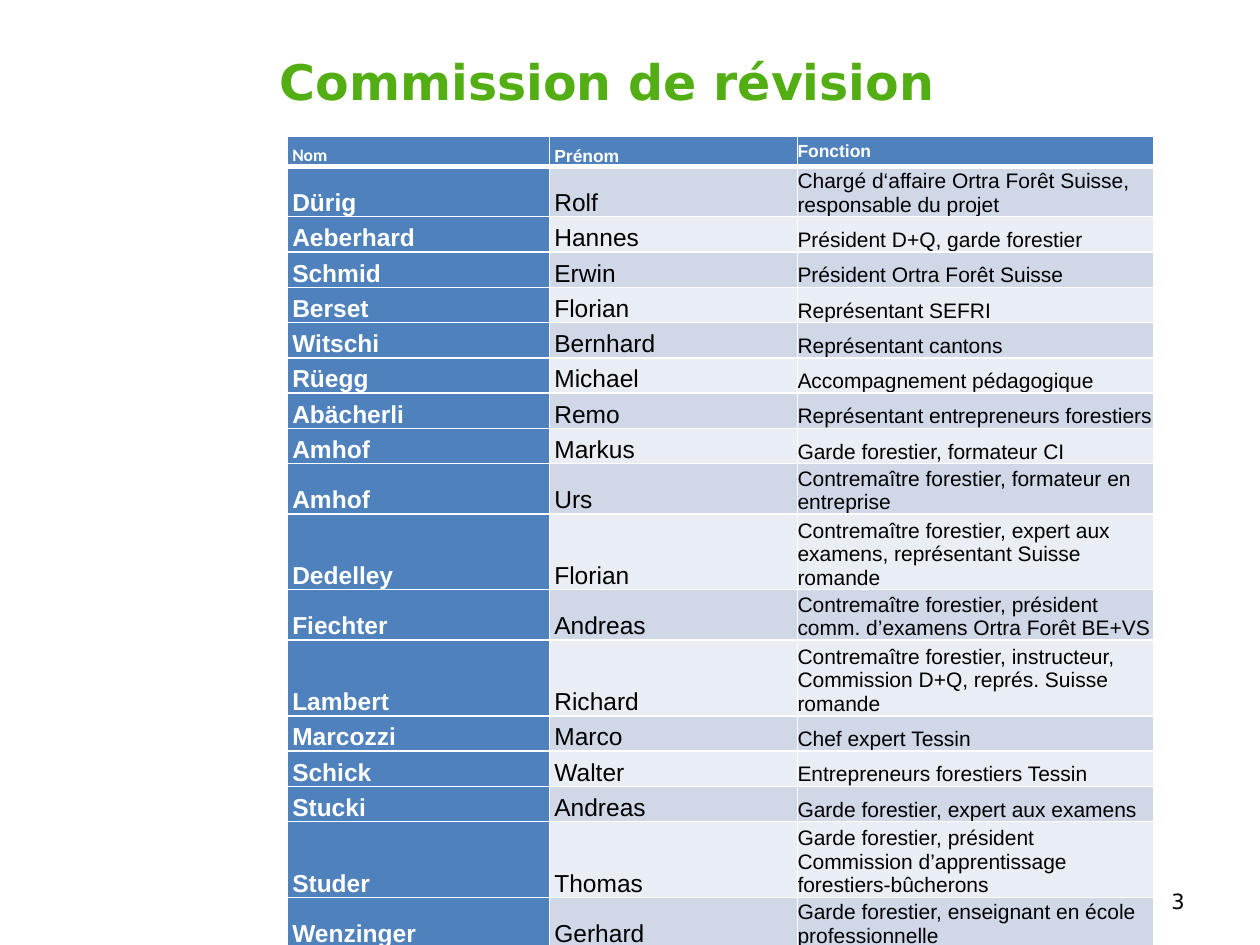
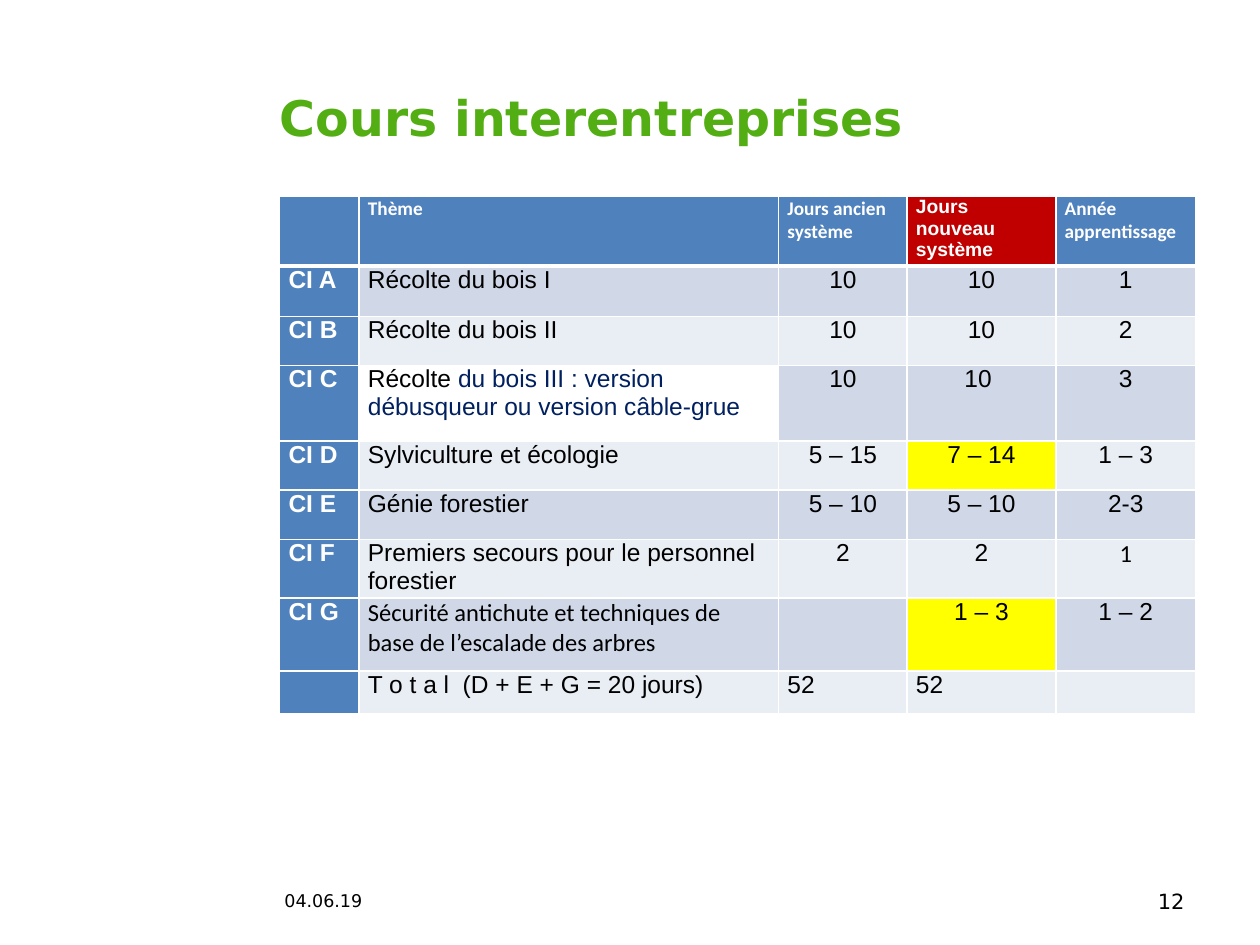
"""Builds two slides: the revision commission and the inter-company courses."""
from lxml.etree import SubElement
from pptx import Presentation
from pptx.dml.color import RGBColor
from pptx.enum.text import MSO_ANCHOR, PP_ALIGN
from pptx.oxml.ns import qn
from pptx.util import Inches, Pt

GREEN, BLACK, WHITE, NAVY = "53AE14", "000000", "FFFFFF", "002060"
BLUE, RED, YELLOW = "4F81BD", "C00000", "FFFF00"
BANDS = ["E9EDF4", "D0D8E8"]
TITLE_FONT = "DejaVu Sans"


def add_run(paragraph, text, size, font, color=BLACK, bold=False):
    """Append one formatted run to a paragraph."""
    run = paragraph.add_run()
    run.text = text
    run.font.size = Pt(size)
    run.font.name = font
    run.font.bold = bold
    run.font.color.rgb = RGBColor.from_string(color)


def paint_cell(cell, row, fill, insets, anchor):
    """Give a cell its white borders, fill, margins and anchor."""
    properties = cell._tc.get_or_add_tcPr()
    thick_side = {0: "lnB", 1: "lnT"}.get(row)
    for side in ("lnL", "lnR", "lnT", "lnB"):
        width = Pt(3 if side == thick_side else 1)
        border = SubElement(properties, qn(f"a:{side}"), w=str(width))
        SubElement(SubElement(border, qn("a:solidFill")), qn("a:srgbClr"), val=WHITE)
    cell.fill.solid()
    cell.fill.fore_color.rgb = RGBColor.from_string(fill)
    side_inset, top_inset = insets
    cell.margin_left = cell.margin_right = Inches(side_inset)
    cell.margin_top, cell.margin_bottom = Inches(top_inset), 0
    cell.vertical_anchor = anchor


members = [
    ("Nom", "Prénom", "Fonction"),
    ("Dürig", "Rolf", "Chargé d‘affaire Ortra Forêt Suisse, responsable du projet"),
    ("Aeberhard", "Hannes", "Président D+Q, garde forestier"),
    ("Schmid", "Erwin", "Président Ortra Forêt Suisse"),
    ("Berset", "Florian", "Représentant SEFRI"),
    ("Witschi", "Bernhard", "Représentant cantons"),
    ("Rüegg", "Michael", "Accompagnement pédagogique"),
    ("Abächerli", "Remo", "Représentant entrepreneurs forestiers"),
    ("Amhof", "Markus", "Garde forestier, formateur CI"),
    ("Amhof", "Urs", "Contremaître forestier, formateur en entreprise"),
    ("Dedelley", "Florian",
     "Contremaître forestier, expert aux examens, représentant Suisse romande"),
    ("Fiechter", "Andreas",
     "Contremaître forestier, président comm. d’examens Ortra Forêt BE+VS"),
    ("Lambert", "Richard",
     "Contremaître forestier, instructeur, Commission D+Q, représ. Suisse romande"),
    ("Marcozzi", "Marco", "Chef expert Tessin"),
    ("Schick", "Walter", "Entrepreneurs forestiers Tessin"),
    ("Stucki", "Andreas", "Garde forestier, expert aux examens"),
    ("Studer", "Thomas",
     "Garde forestier, président Commission d’apprentissage forestiers-bûcherons"),
    ("Wenzinger", "Gerhard", "Garde forestier, enseignant en école professionnelle"),
]
member_columns = [2.08, 1.97, 2.83]
one_line, two_lines, three_lines = 0.28, 0.38, 0.56
member_heights = ([0.24, two_lines] + [one_line] * 7
                  + [two_lines, three_lines, two_lines, three_lines]
                  + [one_line] * 3 + [three_lines, two_lines])

courses = [
    ("", "Thème", "Jours ancien système", "Jours nouveau système", "Année\napprentissage"),
    ("CI A", "Récolte du bois I", "10", "10", "1"),
    ("CI B", "Récolte du bois II", "10", "10", "2"),
    ("CI C", "Récolte |du bois III : version débusqueur ou version câble-grue",
     "10", "10 ", "3"),
    ("CI D", "Sylviculture et écologie", "5 – 15", "7 – 14", "1 – 3"),
    ("CI E", "Génie forestier", "5 – 10", "5 – 10", "2-3"),
    ("CI F", "Premiers secours pour le personnel forestier", "2", "2", "1"),
    ("CI G", "Sécurité antichute et techniques de base de l’escalade des arbres",
     "", "1 – 3", "1 – 2"),
    ("", "T o t a l  (D + E + G = 20 jours)", "52", "52", ""),
]
course_columns = [0.63, 3.33, 1.02, 1.18, 1.11]
course_heights = [0.53, 0.4, 0.39, 0.6, 0.39, 0.39, 0.43, 0.58, 0.34]
special_fills = {(0, 3): RED, (3, 1): WHITE, (4, 3): YELLOW, (7, 3): YELLOW}
calibri_cells = {(0, 1), (0, 2), (0, 4), (6, 4), (7, 1)}

prs = Presentation()
prs.slide_width, prs.slide_height = Inches(10), Inches(7.5)

tables = []
for heading, heading_height, footers, left, top, columns, heights in [
    ("Commission de révision", 0.69, [(7.17, 2.33, "3", 12, PP_ALIGN.RIGHT)],
     2.28, 1.08, member_columns, member_heights),
    ("Cours interentreprises", 1.25,
     [(2.16, 1.17, "04.06.19", 10, PP_ALIGN.LEFT), (7.17, 2.33, "12", 12, PP_ALIGN.RIGHT)],
     2.22, 1.56, course_columns, course_heights),
]:
    slide = prs.slides.add_slide(prs.slide_layouts[5])
    title = slide.shapes.title
    title.left, title.top = Inches(2.12), Inches(0.3)
    title.width, title.height = Inches(7.38), Inches(heading_height)
    title.text_frame.vertical_anchor = MSO_ANCHOR.MIDDLE
    title_line = title.text_frame.paragraphs[0]
    title_line.alignment = PP_ALIGN.LEFT
    add_run(title_line, heading, 28, TITLE_FONT, GREEN, True)

    for footer_left, footer_width, text, size, alignment in footers:
        footer = slide.shapes.add_textbox(
            Inches(footer_left), Inches(6.95), Inches(footer_width), Inches(0.4)).text_frame
        footer.word_wrap = True
        footer.vertical_anchor = MSO_ANCHOR.MIDDLE
        footer.paragraphs[0].alignment = alignment
        add_run(footer.paragraphs[0], text, size, TITLE_FONT)

    table = slide.shapes.add_table(
        len(heights), len(columns), Inches(left), Inches(top),
        Inches(sum(columns)), Inches(sum(heights))).table
    table.first_col = True
    for column, width in zip(table.columns, columns):
        column.width = Inches(width)
    for table_row, height in zip(table.rows, heights):
        table_row.height = Inches(height)
    tables.append(table)

member_table, course_table = tables

for row, member in enumerate(members):
    for col, text in enumerate(member):
        cell = member_table.cell(row, col)
        emphasis = row == 0 or col == 0
        paint_cell(cell, row, BLUE if emphasis else BANDS[row % 2],
                   (0, 0) if col == 2 else (0.04, 0.01),
                   MSO_ANCHOR.MIDDLE if (row, col) == (0, 2) else MSO_ANCHOR.BOTTOM)
        size = 10 if row == 0 else 12 if col == 2 else 14
        add_run(cell.text_frame.paragraphs[0], text, size,
                "Calibri" if (row, col) == (0, 0) else "Arial",
                WHITE if emphasis else BLACK, emphasis)

for row, course in enumerate(courses):
    for col, text in enumerate(course):
        cell = course_table.cell(row, col)
        emphasis = row == 0 or col == 0
        fill = special_fills.get((row, col), BLUE if emphasis else BANDS[row % 2])
        paint_cell(cell, row, fill, (0.07, 0), MSO_ANCHOR.TOP)
        font = "Calibri" if (row, col) in calibri_cells else "Arial"
        colors = [WHITE if emphasis else BLACK, NAVY]
        frame = cell.text_frame
        for index, line in enumerate(text.split("\n")):
            paragraph = frame.add_paragraph() if index else frame.paragraphs[0]
            if col > 1 and 0 < row < len(courses) - 1:
                paragraph.alignment = PP_ALIGN.CENTER
            for part, color in zip(line.split("|"), colors):
                if part:
                    add_run(paragraph, part, 14 if row else 11, font, color, emphasis)

prs.save("out.pptx")
